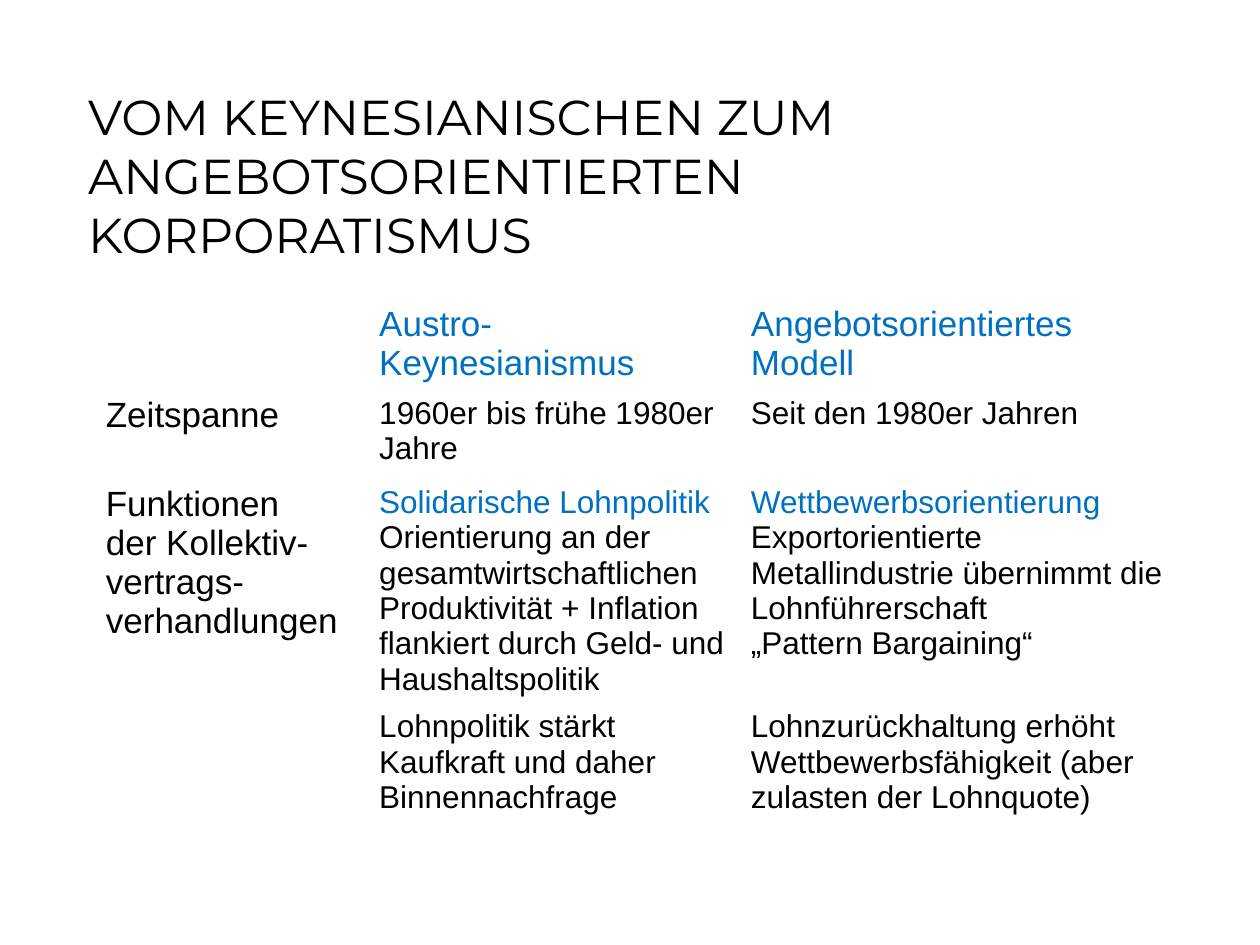
from pptx import Presentation
from pptx.dml.color import RGBColor
from pptx.enum import text
from pptx.util import Inches, Pt

THEME = {
    "title_font": "Montserrat", "body_font": "Arial",
    "black": RGBColor(0, 0, 0), "blue": RGBColor(0x00, 0x70, 0xC0),
    "title_size": 28, "label_size": 20, "body_size": 18,
}

TITLE = "VOM KEYNESIANISCHEN ZUM ANGEBOTSORIENTIERTEN KORPORATISMUS"
HEADINGS = {"Austro-Keynesianismus", "Angebotsorientiertes Modell",
            "Solidarische Lohnpolitik", "Wettbewerbsorientierung"}
ROWS = [
    [[], ["Austro-Keynesianismus"], ["Angebotsorientiertes Modell"]],
    [["Zeitspanne"], ["1960er bis frühe 1980er Jahre"], ["Seit den 1980er Jahren"]],
    [["Funktionen", "der Kollektiv-vertrags-verhandlungen"],
     ["Solidarische Lohnpolitik",
      "Orientierung an der gesamtwirtschaftlichen Produktivität + Inflation",
      "flankiert durch Geld- und Haushaltspolitik"],
     ["Wettbewerbsorientierung",
      "Exportorientierte Metallindustrie übernimmt die Lohnführerschaft",
      "„Pattern Bargaining“"]],
    [[], ["Lohnpolitik stärkt Kaufkraft und daher Binnennachfrage"],
     ["Lohnzurückhaltung erhöht Wettbewerbsfähigkeit (aber zulasten der Lohnquote)"]],
]
COLUMN_WIDTHS = [2.17, 2.95, 3.56]
ROW_HEIGHTS = [0.67, 0.71, 0.71, 0.71]


def write(paragraph, content, *, size, font, color):
    run = paragraph.add_run()
    run.text = content
    run.font.name = font
    run.font.size = Pt(size)
    run.font.bold = False
    run.font.color.rgb = color
    paragraph.alignment = text.PP_ALIGN.LEFT
    paragraph.line_spacing = 1.0
    paragraph.space_before = Pt(0)


def add_title(slide):
    title = slide.shapes.title
    title.left, title.top = Inches(0.6), Inches(0.64)
    title.width, title.height = Inches(8.68), Inches(1.03)
    frame = title.text_frame
    frame.word_wrap = True
    frame.auto_size = text.MSO_AUTO_SIZE.NONE
    frame.vertical_anchor = text.MSO_ANCHOR.TOP
    write(frame.paragraphs[0], TITLE, size=THEME["title_size"],
          font=THEME["title_font"], color=THEME["black"])


def fill_cell(cell, lines, size):
    cell.fill.background()
    frame = cell.text_frame
    for index, line in enumerate(lines):
        paragraph = frame.add_paragraph() if index else frame.paragraphs[0]
        color = THEME["blue"] if line in HEADINGS else THEME["black"]
        write(paragraph, line, size=size, font=THEME["body_font"], color=color)


def add_comparison(slide):
    table = slide.shapes.add_table(
        len(ROWS), len(COLUMN_WIDTHS), Inches(0.74), Inches(2.37),
        Inches(sum(COLUMN_WIDTHS)), Inches(sum(ROW_HEIGHTS))).table
    table.horz_banding = False
    for column, width in zip(table.columns, COLUMN_WIDTHS):
        column.width = Inches(width)
    for row, height in zip(table.rows, ROW_HEIGHTS):
        row.height = Inches(height)
    for row_index, row in enumerate(ROWS):
        for column_index, lines in enumerate(row):
            is_label = row_index == 0 or column_index == 0
            size = THEME["label_size" if is_label else "body_size"]
            fill_cell(table.cell(row_index, column_index), lines, size)


def main():
    presentation = Presentation()
    presentation.slide_width, presentation.slide_height = Inches(10), Inches(7.5)
    slide = presentation.slides.add_slide(presentation.slide_layouts[5])
    add_title(slide)
    add_comparison(slide)
    presentation.save("out.pptx")


if __name__ == "__main__":
    main()
